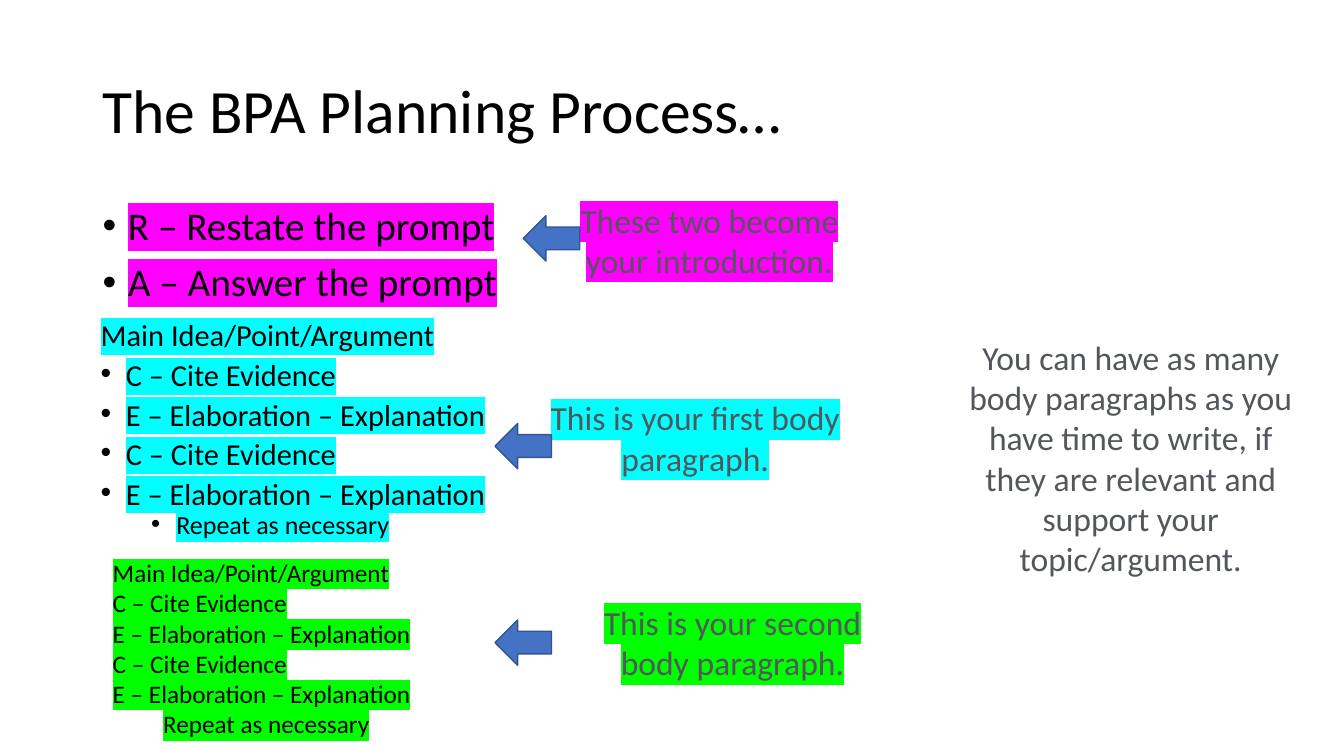
from dataclasses import dataclass

from lxml import etree
from pptx import Presentation
from pptx.dml.color import RGBColor
from pptx.enum.shapes import MSO_SHAPE
from pptx.enum.text import MSO_ANCHOR, MSO_AUTO_SIZE, PP_ALIGN
from pptx.oxml.ns import qn
from pptx.util import Inches, Pt

LEFT_ARROW = MSO_SHAPE.LEFT_ARROW
TOP, MIDDLE = MSO_ANCHOR.TOP, MSO_ANCHOR.MIDDLE
LEFT, CENTER = PP_ALIGN.LEFT, PP_ALIGN.CENTER
FIT_SHAPE, FIXED = MSO_AUTO_SIZE.SHAPE_TO_FIT_TEXT, MSO_AUTO_SIZE.NONE


@dataclass(frozen=True)
class Theme:
    font: str = "Calibri"
    text: str = "000000"
    note_gradient: tuple = ((0.21, "53575C"), (0.88, "C5C7CA"))
    arrow_fill: str = "4472C4"
    arrow_line: str = "325491"
    introduction: str = "FF00FF"
    first_body: str = "00FFFF"
    second_body: str = "00FF00"
    title_size: float = 44
    prompt_size: float = 28
    note_size: float = 24
    outline_size: float = 21.7
    repeat_size: float = 18.6
    small_size: float = 18


def add_text(paragraph, text, *, theme, size, highlight=None, gradient=False,
             align=LEFT, line_spacing=None, space_before=0, level=0,
             margin=0, bullet=False):
    """Fill one paragraph with one formatted run."""
    paragraph.alignment = align
    paragraph.level = level
    paragraph.space_before = Pt(space_before)
    if line_spacing:
        paragraph.line_spacing = line_spacing
    properties = paragraph._p.get_or_add_pPr()
    properties.set("marL", str(Inches(margin)))
    properties.set("indent", str(Inches(-0.25 if bullet else 0)))
    if bullet:
        etree.SubElement(properties, qn("a:buFont")).set("typeface", "Arial")
        etree.SubElement(properties, qn("a:buChar")).set("char", "•")
    else:
        etree.SubElement(properties, qn("a:buNone"))

    run = paragraph.add_run()
    run.text = text
    font = run.font
    font.size = Pt(size)
    if gradient:
        font.fill.gradient()
        font.fill.gradient_angle = 270
        for stop, (position, color) in zip(font.fill.gradient_stops, theme.note_gradient):
            stop.position = position
            stop.color.rgb = RGBColor.from_string(color)
    else:
        font.color.rgb = RGBColor.from_string(theme.text)
    if highlight:
        marker = etree.SubElement(run._r.get_or_add_rPr(), qn("a:highlight"))
        etree.SubElement(marker, qn("a:srgbClr")).set("val", highlight)
    font.name = theme.font


class SlideBuilder:
    def __init__(self, slide, theme):
        self.slide = slide
        self.theme = theme

    def text_box(self, left, top, width, height, lines, anchor=TOP, grow=False, **style):
        """Add a box; each line is its text and its own format."""
        shape = self.slide.shapes.add_textbox(
            Inches(left), Inches(top), Inches(width), Inches(height))
        frame = shape.text_frame
        frame.word_wrap = True
        frame.auto_size = FIT_SHAPE if grow else FIXED
        frame.vertical_anchor = anchor
        for index, (text, own_style) in enumerate(lines):
            paragraph = frame.add_paragraph() if index else frame.paragraphs[0]
            add_text(paragraph, text, theme=self.theme, **{**style, **own_style})

    def note(self, left, top, height, text, highlight=None):
        self.text_box(left, top, 3.41, height, [(text, {})], grow=True, align=CENTER,
                      size=self.theme.note_size, gradient=True, highlight=highlight)

    def arrow(self, left, top):
        shape = self.slide.shapes.add_shape(
            LEFT_ARROW, Inches(left), Inches(top), Inches(0.56), Inches(0.45))
        shape.shadow.inherit = False
        shape.fill.solid()
        shape.fill.fore_color.rgb = RGBColor.from_string(self.theme.arrow_fill)
        shape.line.color.rgb = RGBColor.from_string(self.theme.arrow_line)
        shape.line.width = Pt(1)


def main():
    presentation = Presentation()
    presentation.slide_width = Inches(13.33)
    presentation.slide_height = Inches(7.5)
    theme = Theme()
    builder = SlideBuilder(
        presentation.slides.add_slide(presentation.slide_layouts[6]), theme)

    # Title
    builder.text_box(0.92, 0.4, 11.5, 1.45, [("The BPA Planning Process…", {})],
                     anchor=MIDDLE, size=theme.title_size, line_spacing=0.9)

    # Introduction steps
    bulleted = {"bullet": True, "margin": 0.25}
    prompts = ["R – Restate the prompt", "A – Answer the prompt"]
    builder.text_box(0.92, 2, 4.61, 1.35, [(text, bulleted) for text in prompts],
                     size=theme.prompt_size, highlight=theme.introduction,
                     line_spacing=0.9, space_before=10)

    # Body paragraph outlines
    heading, repeat = "Main Idea/Point/Argument", "Repeat as necessary"
    steps = ["C – Cite Evidence", "E – Elaboration – Explanation"] * 2
    first_repeat = {"bullet": True, "margin": 0.75, "level": 1,
                    "size": theme.repeat_size, "space_before": 5}
    builder.text_box(
        0.9, 3.19, 4.61, 2.29,
        [(heading, {}), *((step, bulleted) for step in steps), (repeat, first_repeat)],
        size=theme.outline_size, highlight=theme.first_body,
        line_spacing=0.7, space_before=10)
    builder.text_box(
        1.02, 5.48, 6.67, 1.92,
        [*((text, {}) for text in [heading, *steps]),
         (repeat, {"margin": 0.5, "level": 1})],
        grow=True, size=theme.small_size, highlight=theme.second_body)

    # Notes and the arrows that point from them to the outlines
    builder.note(5.33, 1.93, 0.91, "These two become your introduction.", theme.introduction)
    builder.note(5.19, 3.89, 0.91, "This is your first body paragraph.", theme.first_body)
    builder.note(5.56, 5.92, 0.91, "This is your second body paragraph.", theme.second_body)
    builder.note(9.51, 3.29, 2.52,
                 "You can have as many body paragraphs as you have time to write, "
                 "if they are relevant and support your topic/argument.")
    for left, top in [(5.19, 2.14), (4.91, 4.2), (4.91, 6.15)]:
        builder.arrow(left, top)

    presentation.save("out.pptx")


if __name__ == "__main__":
    main()
